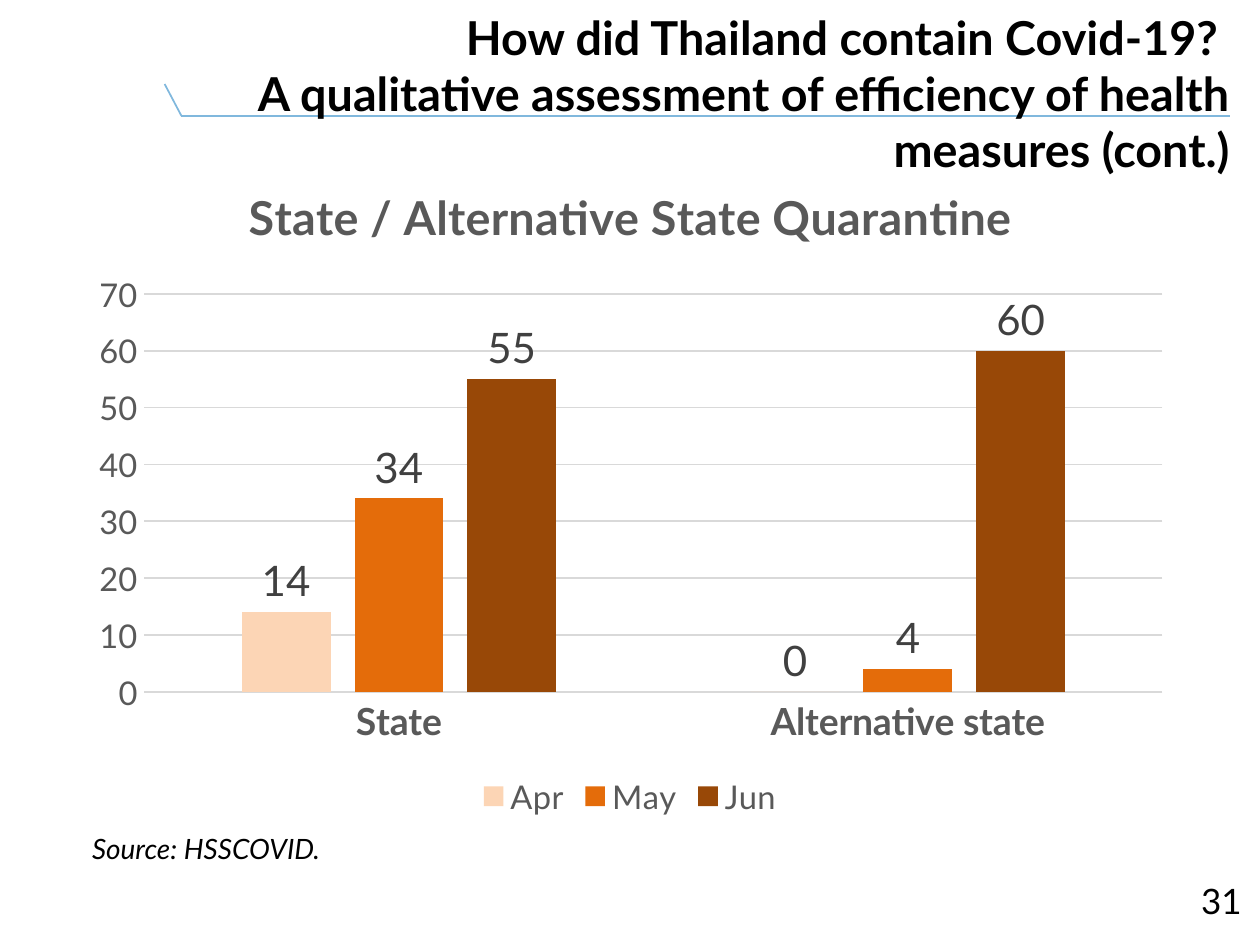
from lxml.etree import SubElement
from pptx import Presentation
from pptx.chart.data import CategoryChartData
from pptx.dml.color import RGBColor
from pptx.enum.chart import XL_CHART_TYPE, XL_LABEL_POSITION, XL_LEGEND_POSITION, XL_TICK_MARK
from pptx.enum.shapes import MSO_CONNECTOR
from pptx.enum.text import MSO_ANCHOR, MSO_AUTO_SIZE, PP_ALIGN
from pptx.oxml.ns import qn
from pptx.oxml.xmlchemy import OxmlElement
from pptx.util import Inches, Pt

FONT = "Lato"
SLIDE_W = 7.5
SLIDE_H = SLIDE_W * 3 / 4
CHART_W, CHART_H = 6.6, 3.99
COLORS = {
    "text": "000000",
    "rule": "80B8DD",
    "axis": "595959",
    "grid": "D9D9D9",
    "label": "404040",
    "Apr": "FCD5B5",
    "May": "E46C0A",
    "Jun": "984807",
}
MONTHS = {"Apr": (14, 0), "May": (34, 4), "Jun": (55, 60)}


def color(name):
    return RGBColor.from_string(COLORS[name])


def set_font(font, size, name="text", bold=False, italic=False):
    font.name = FONT
    font.size = Pt(size)
    font.bold = bold
    font.italic = italic
    font.color.rgb = color(name)


def set_line(line, name):
    line.color.rgb = color(name)
    line.width = Pt(0.75)


def write(sp, text, align=PP_ALIGN.LEFT, anchor=MSO_ANCHOR.TOP, **font):
    tf = sp.text_frame
    tf.word_wrap = True
    tf.auto_size = MSO_AUTO_SIZE.NONE
    tf.vertical_anchor = anchor
    p = tf.paragraphs[0]
    p.text = text
    p.alignment = align
    for r in p.runs:
        set_font(r.font, **font)


def place(sp, x, y, w, h):
    sp.left, sp.top, sp.width, sp.height = map(Inches, (x, y, w, h))


def add_text(s, box, text, **style):
    sp = s.shapes.add_textbox(*map(Inches, box))
    write(sp, text, **style)


def add_rule(s, *ends):
    sp = s.shapes.add_connector(MSO_CONNECTOR.STRAIGHT, *map(Inches, ends))
    set_line(sp.line, "rule")
    sp._element.spPr.append(OxmlElement("a:effectLst"))


def set_layout(parent, index, x, y, **values):
    for old in parent.findall(qn("c:layout")):
        parent.remove(old)
    layout = OxmlElement("c:layout")
    manual = SubElement(layout, qn("c:manualLayout"))
    values.update(xMode="edge", yMode="edge", x=x / CHART_W, y=y / CHART_H)
    for tag in ("layoutTarget", "xMode", "yMode", "x", "y", "w", "h"):
        if tag in values:
            SubElement(manual, qn(f"c:{tag}")).set("val", str(values[tag]))
    parent.insert(index, layout)


def format_axis(axis, size, bold=False):
    axis.major_tick_mark = XL_TICK_MARK.NONE
    axis.minor_tick_mark = XL_TICK_MARK.NONE
    set_font(axis.tick_labels.font, size, "axis", bold=bold)


def format_series(series):
    series.format.fill.solid()
    series.format.fill.fore_color.rgb = color(series.name)
    series.invert_if_negative = False
    labels = series.data_labels
    labels.show_value = True
    labels.position = XL_LABEL_POSITION.OUTSIDE_END
    set_font(labels.font, 18, "label")


def add_quarantine_chart(s):
    data = CategoryChartData()
    data.categories = ["State", "Alternative state"]
    for month, values in MONTHS.items():
        data.add_series(month, values)
    box = map(Inches, (0.45, 0.91, CHART_W, CHART_H))
    chart = s.shapes.add_chart(XL_CHART_TYPE.COLUMN_CLUSTERED, *box, data).chart
    set_font(chart.font, 18)

    chart.has_title = True
    p = chart.chart_title.text_frame.paragraphs[0]
    r = p.add_run()
    r.text = "State / Alternative State Quarantine"
    set_font(r.font, 20, "axis", bold=True)

    chart.has_legend = True
    chart.legend.position = XL_LEGEND_POSITION.BOTTOM
    chart.legend.include_in_layout = False
    set_font(chart.legend.font, 14, "axis")

    format_axis(chart.category_axis, 16, bold=True)
    set_line(chart.category_axis.format.line, "grid")
    value_axis = chart.value_axis
    format_axis(value_axis, 14)
    value_axis.format.line.fill.background()
    value_axis.minimum_scale, value_axis.maximum_scale = 0, 70
    value_axis.major_unit = 10
    set_line(value_axis.major_gridlines.format.line, "grid")

    plot = chart.plots[0]
    plot.gap_width = 219
    plot.overlap = -27
    plot.vary_by_categories = False
    for series in plot.series:
        format_series(series)

    root = chart._chartSpace.find(qn("c:chart"))
    set_layout(root.find(qn("c:title")), 1, 0.98, 0.13)
    set_layout(root.find(qn("c:plotArea")), 0, 0.41, 0.84, layoutTarget="inner",
               w=6.06 / CHART_W, h=2.37 / CHART_H)


def main():
    prs = Presentation()
    prs.slide_width, prs.slide_height = Inches(SLIDE_W), Inches(SLIDE_H)
    s = prs.slides.add_slide(prs.slide_layouts[5])

    add_rule(s, 0.98, 0.5, 1.08, 0.69)
    add_rule(s, 1.08, 0.69, 7.32, 0.69)
    title = s.shapes.title
    s.shapes._spTree.append(title._element)
    place(title, 0.82, 0, 6.6, 0.77)
    write(title, "How did Thailand contain Covid-19? \v"
          "A qualitative assessment of efficiency of health measures (cont.)",
          align=PP_ALIGN.RIGHT, size=20, bold=True)
    add_quarantine_chart(s)
    add_text(s, (0.45, 4.9, 3.77, 0.3), "Source: HSSCOVID.", size=12, italic=True)
    add_text(s, (5.74, 5.21, 1.75, 0.3), "31", align=PP_ALIGN.RIGHT,
             anchor=MSO_ANCHOR.MIDDLE, size=15)
    prs.save("out.pptx")


if __name__ == "__main__":
    main()
